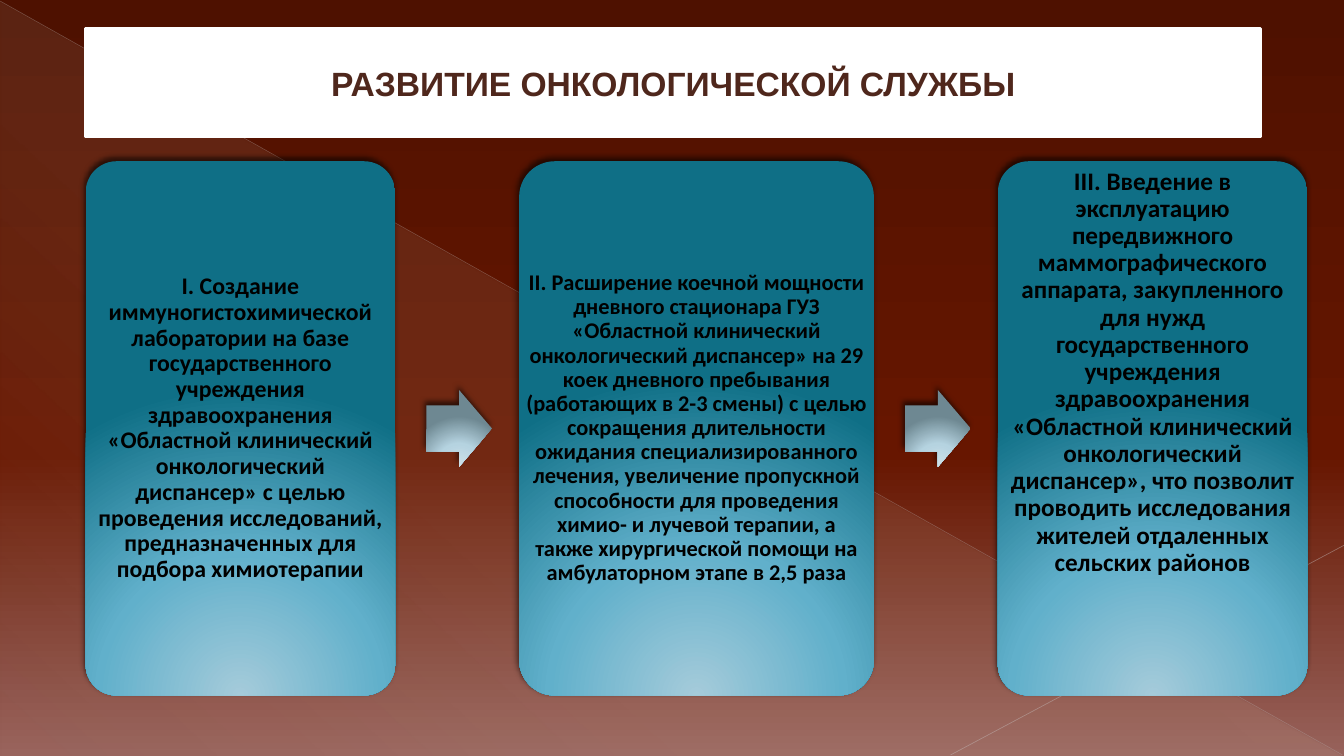
from dataclasses import dataclass

from lxml import etree
from pptx import Presentation
from pptx.dml.color import RGBColor
from pptx.enum.shapes import MSO_CONNECTOR, MSO_SHAPE
from pptx.enum.text import MSO_ANCHOR, PP_ALIGN
from pptx.oxml.ns import qn
from pptx.util import Inches, Pt

STRAIGHT = MSO_CONNECTOR.STRAIGHT
TRIANGLE = MSO_SHAPE.RIGHT_TRIANGLE
RECTANGLE = MSO_SHAPE.RECTANGLE
CARD = MSO_SHAPE.ROUNDED_RECTANGLE
ARROW = MSO_SHAPE.RIGHT_ARROW
TOP, MIDDLE = MSO_ANCHOR.TOP, MSO_ANCHOR.MIDDLE
CENTER = PP_ALIGN.CENTER

# The slide is a grid of square cells
COLUMNS, ROWS = 160, 90
CELL = Inches(7.5) / ROWS


@dataclass(frozen=True)
class Theme:
    # Gradient stops: position, colour, opacity (all in percent but colour)
    background: tuple = ((0, "4E1100", 100), (60, "671600", 100), (100, "97625B", 100))
    veil: tuple = ((0, "E7DEC9", 10), (70, "E7DEC9", 8), (100, "E7DEC9", 1))
    card: tuple = ((0, "A5CBDA", 100), (46, "61B0CB", 100), (100, "0F6F86", 100))
    arrow: tuple = ((0, "CFE2E9", 100), (46, "B5D3E0", 100), (100, "6E8892", 100))
    long_line: str = "BDB3B2"
    short_line: str = "C5BCBB"
    banner: str = "FFFFFF"
    title: str = "4F271C"
    text: str = "000000"
    shadow: str = "000000"
    title_font: str = "Arial"
    text_font: str = "Calibri"
    title_size: int = 24
    step_sizes: tuple = (17, 16, 18)
    margin: float = 0.07


def length(cells):
    return round(cells * CELL)


def add_color(parent, color, opacity):
    element = etree.SubElement(parent, qn("a:srgbClr"), val=color)
    if opacity < 100:
        etree.SubElement(element, qn("a:alpha"), val=str(opacity * 1000))


class SlideBuilder:
    def __init__(self, slide, theme):
        self.slide = slide
        self.theme = theme

    def gradient(self, fill, owner, stops, angle=None):
        """Linear at the given angle, or circular from below the shape."""
        fill.solid()
        solid = next(owner.iter(qn("a:solidFill")))
        gradient = etree.Element(qn("a:gradFill"), rotWithShape="1")
        stop_list = etree.SubElement(gradient, qn("a:gsLst"))
        for position, color, opacity in stops:
            stop = etree.SubElement(stop_list, qn("a:gs"), pos=str(position * 1000))
            add_color(stop, color, opacity)
        if angle is None:
            circle = etree.SubElement(gradient, qn("a:path"))
            circle.set("path", "circle")
            etree.SubElement(circle, qn("a:fillToRect"),
                             l="50000", t="155000", r="50000", b="-55000")
        else:
            etree.SubElement(gradient, qn("a:lin"), ang=str(angle * 60000), scaled="0")
        solid.getparent().replace(solid, gradient)

    def background(self):
        self.gradient(self.slide.background.fill, self.slide._element,
                      self.theme.background, 90)

    def shape(self, kind, box, adjustments=()):
        shape = self.slide.shapes.add_shape(kind, *map(length, box))
        shape.shadow.inherit = False
        shape.line.fill.background()
        for index, value in enumerate(adjustments):
            shape.adjustments[index] = value
        return shape

    def veil(self, box):
        shape = self.shape(TRIANGLE, box)
        self.gradient(shape.fill, shape._element.spPr, self.theme.veil, 133)

    def glossy(self, kind, box, stops, adjustments):
        shape = self.shape(kind, box, adjustments)
        properties = shape._element.spPr
        self.gradient(shape.fill, properties, stops)
        shadow = etree.SubElement(
            properties.find(qn("a:effectLst")), qn("a:outerShdw"),
            blurRad=str(Pt(4)), dist=str(Pt(3)), dir=str(245 * 60000), rotWithShape="0")
        add_color(shadow, self.theme.shadow, 60)

    def line(self, start, end, color, width, opacity):
        connector = self.slide.shapes.add_connector(
            STRAIGHT, *map(length, start + end))
        connector.line.width = Pt(width)
        connector.line.color.rgb = RGBColor.from_string(color)
        properties = connector._element.spPr
        color_element = next(properties.iter(qn("a:srgbClr")))
        etree.SubElement(color_element, qn("a:alpha"), val=str(opacity * 1000))
        etree.SubElement(properties, qn("a:effectLst"))

    def set_text(self, shape, text, anchor, spacing, color, **font_format):
        frame = shape.text_frame
        margin = Inches(self.theme.margin)
        frame_format = {"word_wrap": True, "vertical_anchor": anchor,
                        "margin_left": margin, "margin_right": margin,
                        "margin_top": margin, "margin_bottom": margin}
        paragraph = frame.paragraphs[0]
        run = paragraph.add_run()
        run.text = text
        run.font.color.rgb = RGBColor.from_string(color)
        for target, values in (
            (frame, frame_format),
            (paragraph, {"alignment": CENTER, "line_spacing": spacing}),
            (run.font, {"bold": True, **font_format}),
        ):
            for name, value in values.items():
                setattr(target, name, value)

    def banner(self, box, text):
        theme = self.theme
        shape = self.shape(RECTANGLE, box)
        shape.fill.solid()
        shape.fill.fore_color.rgb = RGBColor.from_string(theme.banner)
        shape.line.color.rgb = RGBColor.from_string(theme.banner)
        shape.line.width = Pt(2)
        self.set_text(shape, text, MIDDLE, 1.0, theme.title,
                      name=theme.title_font, size=Pt(theme.title_size))

    def card(self, box, text, size, anchor):
        theme = self.theme
        self.glossy(CARD, box, theme.card, [0.1])
        label = self.slide.shapes.add_textbox(*map(length, box))
        self.set_text(label, text, anchor, 0.9, theme.text,
                      name=theme.text_font, size=Pt(size))

    def arrow(self, box):
        self.glossy(ARROW, box, self.theme.arrow, [0.6, 0.5])


# Steps: width in columns, anchor, text
STEPS = [
    (36.84, MIDDLE,
     "I. Создание иммуногистохимической лаборатории на базе государственного "
     "учреждения здравоохранения «Областной клинический онкологический диспансер» "
     "с целью проведения исследований, предназначенных для подбора химиотерапии"),
    (42.24, MIDDLE,
     "II. Расширение коечной мощности дневного стационара ГУЗ «Областной клинический "
     "онкологический диспансер» на 29 коек дневного пребывания (работающих в 2-3 смены) "
     "с целью сокращения длительности ожидания специализированного лечения, увеличение "
     "пропускной способности для проведения химио- и лучевой терапии, а также "
     "хирургической помощи на амбулаторном этапе в 2,5 раза"),
    (36.84, TOP,
     "III. Введение в эксплуатацию передвижного маммографического аппарата, закупленного "
     "для нужд государственного учреждения здравоохранения «Областной клинический "
     "онкологический диспансер», что позволит проводить исследования жителей отдаленных "
     "сельских районов"),
]
LEFT, CARD_TOP, CARD_HEIGHT = 10.2, 19.2, 63.6
CARD_GAP, ARROW_OFFSET = 14.76, 3.72
ARROW_WIDTH, ARROW_HEIGHT = 7.8, 9.12


def main():
    presentation = Presentation()
    presentation.slide_width = length(COLUMNS)
    presentation.slide_height = length(ROWS)
    slide = presentation.slides.add_slide(presentation.slide_layouts[6])
    theme = Theme()
    builder = SlideBuilder(slide, theme)
    # Backdrop
    builder.background()
    builder.veil((0.12, 0.24, 159.72, 89.76))
    builder.line((0, 0.12), (159.84, 89.88), theme.long_line, 0.39, 35)
    builder.line((COLUMNS, 64.92), (113.16, 89.88), theme.short_line, 0.47, 45)
    # Steps from left to right, with an arrow in each gap
    left = LEFT
    arrow_top = CARD_TOP + (CARD_HEIGHT - ARROW_HEIGHT) / 2
    for number, (width, anchor, text) in enumerate(STEPS):
        if number:
            arrow_left = left - CARD_GAP + ARROW_OFFSET
            builder.arrow((arrow_left, arrow_top, ARROW_WIDTH, ARROW_HEIGHT))
        box = (left, CARD_TOP, width, CARD_HEIGHT)
        builder.card(box, text, theme.step_sizes[number], anchor)
        left += width + CARD_GAP
    # Title
    builder.banner((LEFT, 3.36, 139.92, 12.96), "РАЗВИТИЕ ОНКОЛОГИЧЕСКОЙ СЛУЖБЫ")
    presentation.save("out.pptx")


if __name__ == "__main__":
    main()
